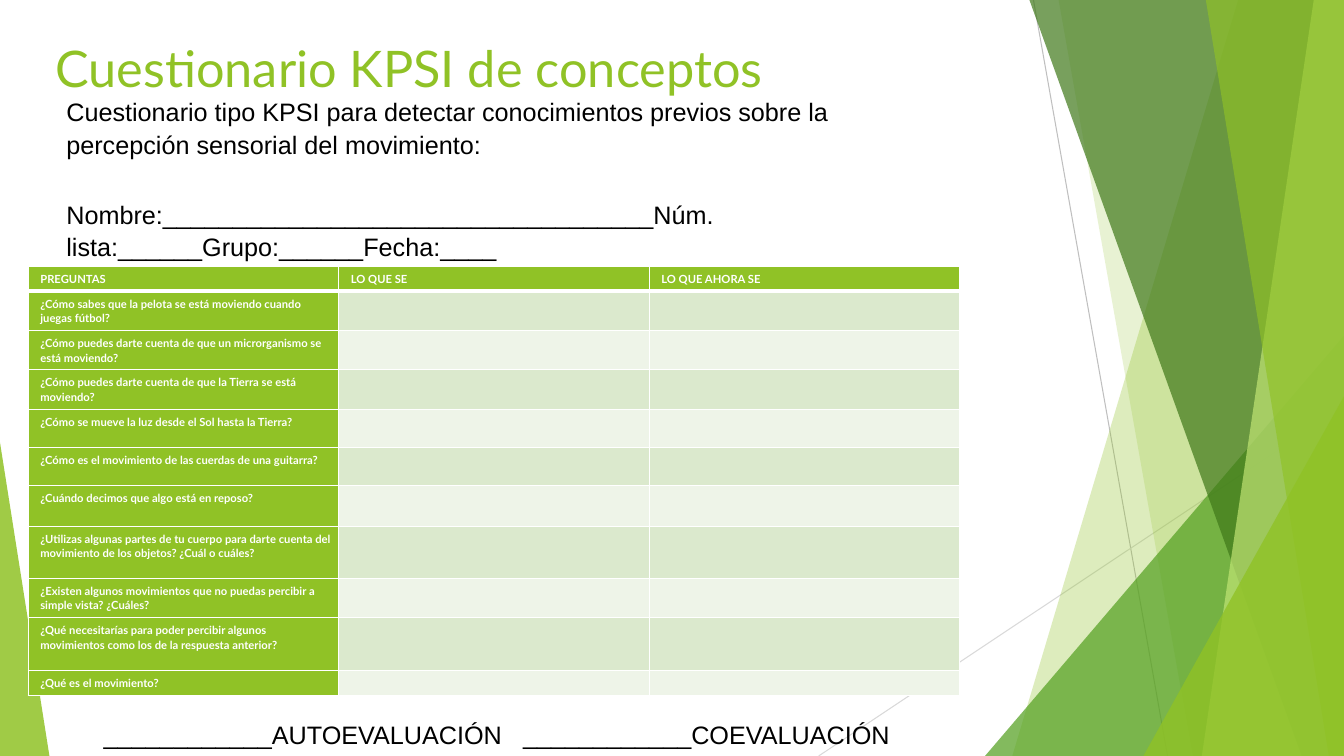
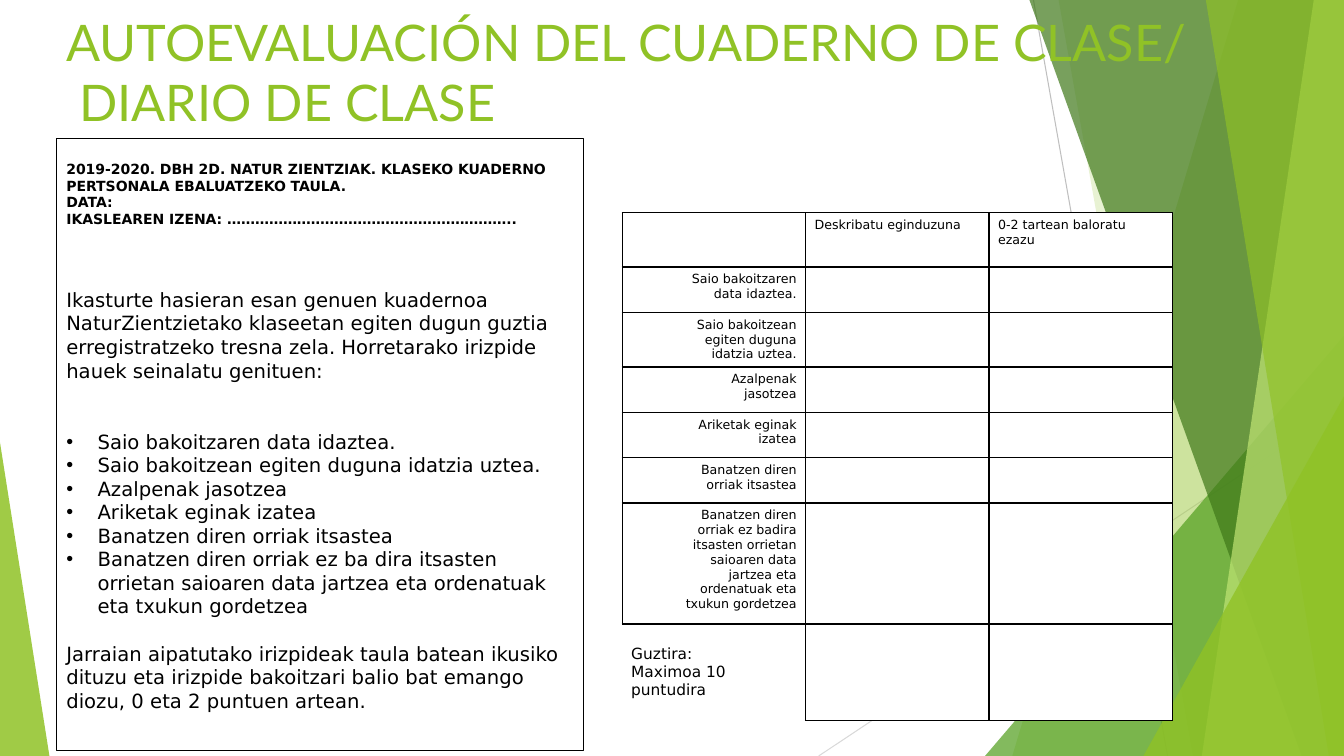
from dataclasses import dataclass
from typing import Any, Optional

from lxml.etree import SubElement
from pptx import Presentation
from pptx.dml.color import RGBColor
from pptx.enum.shapes import MSO_CONNECTOR as Connector, MSO_SHAPE as Preset
from pptx.enum.text import MSO_ANCHOR as Anchor, MSO_AUTO_SIZE as AutoSize, PP_ALIGN as Align
from pptx.oxml.ns import qn
from pptx.util import Inches, Pt

WIDTH, HEIGHT = 13.33, 7.5
COLOURS = {
    "green": "90C226", "leaf": "54A021", "forest": "3F7819", "lime": "C0E474",
    "band": "DBE9CD", "pale": "EEF4E8", "white": "FFFFFF", "black": "000000",
    "grey": "BFBFBF", "light grey": "D9D9D9",
}


@dataclass
class Style:
    font: str
    size: float
    colour: str = "black"
    bold: bool = False


@dataclass
class Paragraph:
    text: str
    style: Style
    format: Optional[dict[str, Any]] = None
    bullet: bool = False
    indent: float = 0


@dataclass
class Ray:
    start: tuple[float, float]
    end: tuple[float, float]
    colour: str


@dataclass
class Facet:
    """A translucent panel from the top edge to the bottom, against the right side."""
    top_left: float
    bottom_left: float
    colour: str
    opacity: int


@dataclass
class Wedge:
    """A translucent right triangle standing on the bottom edge."""
    left: float
    top: float
    width: float
    apex: int
    colour: str
    opacity: int


TITLE = Style("Lato", 36, "green")
ARIAL = Style("Arial", 18)
QUESTION = Style("Lato", 8, "white", True)
HEADING = Style("DejaVu Sans", 10, bold=True)
BODY = Style("DejaVu Sans", 14)
CRITERION = Style("DejaVu Sans", 9)
TOTAL = Style("DejaVu Sans", 11)

BACKDROP = [
    Ray((10.25, 0), (11.58, HEIGHT), "grey"),
    Ray((WIDTH, 4.03), (8.12, HEIGHT), "light grey"),
    Facet(12.28, 10.04, "green", 30),
    Facet(10.5, 11.83, "green", 20),
    Wedge(9.77, 3.33, 3.56, 1, "leaf", 72),
    Facet(10.21, 12.91, "forest", 70),
    Facet(13.03, 11.92, "lime", 70),
    Facet(11.96, 13.18, "green", 65),
    Wedge(11.34, 3.93, 1.99, 1, "green", 80),
    Wedge(0, 4.39, 0.49, 0, "green", 85),
]

QUESTIONS = [
    ("¿Cómo sabes que la pelota se está moviendo cuando juegas fútbol?", 0.39),
    ("¿Cómo puedes darte cuenta de que un microrganismo se está moviendo?", 0.39),
    ("¿Cómo puedes darte cuenta de que la Tierra se está moviendo?", 0.39),
    ("¿Cómo se mueve la luz desde el Sol hasta la Tierra?", 0.38),
    ("¿Cómo es el movimiento de las cuerdas de una guitarra?", 0.38),
    ("¿Cuándo decimos que algo está en reposo?", 0.4),
    ("¿Utilizas algunas partes de tu cuerpo para darte cuenta del movimiento de los objetos? "
     "¿Cuál o cuáles?", 0.52),
    ("¿Existen algunos movimientos que no puedas percibir a simple vista? ¿Cuáles?", 0.39),
    ("¿Qué necesitarías para poder percibir algunos movimientos como los de la respuesta "
     "anterior?", 0.52),
    ("¿Qué es el movimiento?", 0.25),
]

CRITERIA = [
    ("Saio bakoitzaren data idaztea.", 0.45),
    ("Saio bakoitzean egiten duguna idatzia uztea.", 0.54),
    ("Azalpenak jasotzea", 0.45),
    ("Ariketak eginak izatea", 0.45),
    ("Banatzen diren orriak itsastea", 0.45),
    ("Banatzen diren orriak ez badira itsasten orrietan saioaren data jartzea eta ordenatuak "
     "eta txukun gordetzea", 1.2),
]


def rgb(name: str) -> RGBColor:
    return RGBColor.from_string(COLOURS[name])


def lengths(*values: float) -> list[int]:
    return [Inches(value) for value in values]


def apply(target: Any, values: dict[str, Any]) -> None:
    for name, value in values.items():
        setattr(target, name, value)


def write(frame: Any, paragraphs: list[Paragraph]) -> None:
    frame.word_wrap = True
    for index, item in enumerate(paragraphs):
        para = frame.add_paragraph() if index else frame.paragraphs[0]
        apply(para, {"alignment": Align.LEFT, **(item.format or {})})
        properties = para._p.get_or_add_pPr()
        if item.indent:
            properties.set("marL", str(Inches(item.indent)))
        if item.bullet:
            properties.set("indent", str(-Inches(item.indent)))
            SubElement(properties, qn("a:buFont"), typeface="Arial")
            SubElement(properties, qn("a:buChar"), char="•")
        style = item.style
        if not item.text:
            SubElement(para._p, qn("a:endParaRPr"), sz=str(int(style.size * 100)))
            continue
        for number, line in enumerate(item.text.split("\n")):
            if number:
                para.add_line_break()
            span = para.add_run()
            span.text = line
            apply(span.font, {"name": style.font, "size": Pt(style.size), "bold": style.bold})
            span.font.color.rgb = rgb(style.colour)


def make_translucent(shape: Any, colour: str, opacity: int) -> None:
    shape.shadow.inherit = False
    shape.fill.solid()
    shape.fill.fore_color.rgb = rgb(colour)
    shape.line.fill.background()
    for colour_element in shape.element.iter(qn("a:srgbClr")):
        SubElement(colour_element, qn("a:alpha"), val=str(opacity * 1000))


def draw_ray(page: Any, ray: Ray) -> Any:
    line = page.shapes.add_connector(Connector.STRAIGHT, *lengths(*ray.start, *ray.end))
    line.line.color.rgb = rgb(ray.colour)
    line.line.width = Pt(0.75)
    SubElement(line.element.spPr, qn("a:effectLst"))
    return line


def draw_facet(page: Any, facet: Facet) -> Any:
    corners = [(WIDTH, 0), (WIDTH, HEIGHT), (facet.bottom_left, HEIGHT)]
    builder = page.shapes.build_freeform(*lengths(facet.top_left, 0))
    builder.add_line_segments([tuple(lengths(*corner)) for corner in corners])
    shape = builder.convert_to_shape()
    make_translucent(shape, facet.colour, facet.opacity)
    return shape


def draw_wedge(page: Any, wedge: Wedge) -> Any:
    box = lengths(wedge.left, wedge.top, wedge.width, HEIGHT - wedge.top)
    shape = page.shapes.add_shape(Preset.ISOSCELES_TRIANGLE, *box)
    shape.adjustments[0] = wedge.apex
    make_translucent(shape, wedge.colour, wedge.opacity)
    return shape


def move_backdrop_to_layout(page: Any) -> None:
    """Draw the backdrop and hand its shapes to the layout, so that all pages share them."""
    layout = page.slide_layout
    for holder in list(layout.placeholders)[1:]:
        holder.element.getparent().remove(holder.element)
    painters = {Ray: draw_ray, Facet: draw_facet, Wedge: draw_wedge}
    for item in BACKDROP:
        layout.shapes.element.append(painters[type(item)](page, item).element)


def set_title(page: Any, text: str, left: float, top: float, width: float) -> None:
    title = page.shapes.title
    left, top, width, height = lengths(left, top, width, 1.44)
    apply(title, {"left": left, "top": top, "width": width, "height": height})
    apply(title.text_frame, {"auto_size": AutoSize.NONE, "vertical_anchor": Anchor.TOP})
    write(title.text_frame, [Paragraph(text, TITLE)])


def add_text(page: Any, box: list[int], paragraphs: list[Paragraph]) -> Any:
    shape = page.shapes.add_textbox(*box)
    write(shape.text_frame, paragraphs)
    return shape


def add_grid(page: Any, left: float, top: float, column: float, heights: list[float]) -> Any:
    """Add a three-column table without the default banding."""
    box = lengths(left, top, 3 * column, sum(heights))
    table = page.shapes.add_table(len(heights), 3, *box).table
    apply(table, {"first_row": False, "horz_banding": False})
    for row, height in zip(table.rows, heights):
        row.height = Inches(height)
    return table


def fill_cell(cell: Any, paragraphs: list[Paragraph], fill: str, margin: float,
              borders: dict[str, float], border_colour: str) -> None:
    """Borders map a side (L, R, T, B) to its width in points; 0 hides it."""
    side, edge = lengths(margin, 0.05)
    apply(cell, {"margin_left": side, "margin_right": side,
                 "margin_top": edge, "margin_bottom": edge})
    write(cell.text_frame, paragraphs)
    properties = cell._tc.get_or_add_tcPr()
    for name, width in borders.items():
        line = SubElement(properties, qn(f"a:ln{name}"), w=str(Pt(width)))
        if width:
            paint = SubElement(line, qn("a:solidFill"))
            SubElement(paint, qn("a:srgbClr"), val=COLOURS[border_colour])
        else:
            SubElement(line, qn("a:noFill"))
    cell.fill.solid()
    cell.fill.fore_color.rgb = rgb(fill)


def build_questionnaire(page: Any) -> None:
    set_title(page, "Cuestionario KPSI de conceptos", 0.45, 0.32, 9.4)
    spacing = {"line_spacing": 1.07}
    add_text(page, lengths(0.56, 0.89, 8.96, 1.76), [
        Paragraph("Cuestionario tipo KPSI para detectar conocimientos previos sobre la "
                  "percepción sensorial del movimiento:", ARIAL, spacing),
        Paragraph("Nombre:___________________________________Núm. "
                  "lista:______Grupo:______Fecha:____", ARIAL,
                  {**spacing, "space_before": Pt(27)}),
    ])
    rows = [["PREGUNTAS", "LO QUE SE", "LO QUE AHORA SE"]]
    rows += [[question, "", ""] for question, _ in QUESTIONS]
    table = add_grid(page, 0.28, 2.64, 3.08, [0.25] + [height for _, height in QUESTIONS])
    for row, texts in enumerate(rows):
        for column, text in enumerate(texts):
            fill = "green" if row == 0 or column == 0 else ("pale", "band")[row % 2]
            borders = {"L": 1, "R": 1, "T": 3 if row == 1 else 1, "B": 1 if row else 3}
            fill_cell(table.cell(row, column), [Paragraph(text, QUESTION, spacing, indent=0.07)],
                      fill, 0.05, borders, "white")
    footer = add_text(page, lengths(0.93, 7.07, 8.92, 0.43), [
        Paragraph("____________AUTOEVALUACIÓN\t____________COEVALUACIÓN", ARIAL, spacing)])
    properties = footer.text_frame.paragraphs[0]._p.get_or_add_pPr()
    stops = SubElement(properties, qn("a:tabLst"))
    SubElement(stops, qn("a:tab"), pos=str(Inches(4.16)), algn="l")


def build_self_assessment(page: Any) -> None:
    set_title(page, "AUTOEVALUACIÓN DEL CUADERNO DE CLASE/\n DIARIO DE CLASE", 0.56, 0.06, 12.47)
    rows = [["", "Deskribatu eginduzuna", "0-2 tartean baloratu ezazu"]]
    rows += [[criterion, "", ""] for criterion, _ in CRITERIA] + [["", "", ""]]
    heights = [0.54] + [height for _, height in CRITERIA] + [0.96]
    table = add_grid(page, 6.17, 2.11, 1.82, heights)
    last = len(rows) - 1
    for row, texts in enumerate(rows):
        for column, text in enumerate(texts):
            paragraphs = [Paragraph(text, CRITERION)]
            borders = dict.fromkeys("LRTB", 1)
            if column == 0 and row == last:
                paragraphs = [Paragraph(line, TOTAL) for line in ("Guztira:", "Maximoa 10 puntudira")]
                borders.update(L=0, B=0)
                table.cell(row, column).vertical_anchor = Anchor.MIDDLE
            elif column == 0:
                paragraphs = [Paragraph(text, CRITERION, {"alignment": Align.RIGHT}, indent=0.5)]
            fill_cell(table.cell(row, column), paragraphs, "white", 0.09, borders, "black")

    panel = page.shapes.add_shape(Preset.RECTANGLE, *lengths(0.56, 1.37, 5.23, 6.08))
    panel.shadow.inherit = False
    panel.fill.background()
    panel.line.color.rgb = rgb("black")
    panel.line.width = Pt(0.75)
    apply(panel.text_frame, {"vertical_anchor": Anchor.TOP, "margin_top": Inches(0.22)})
    bullets = [criterion for criterion, _ in CRITERIA[:-1]]
    bullets.append("Banatzen diren orriak ez ba dira itsasten orrietan saioaren data jartzea "
                   "eta ordenatuak eta txukun gordetzea")
    write(panel.text_frame, [
        Paragraph("2019-2020. DBH 2D. NATUR ZIENTZIAK. KLASEKO KUADERNO PERTSONALA "
                  "EBALUATZEKO TAULA.", HEADING),
        Paragraph("DATA:", HEADING),
        Paragraph("IKASLEAREN IZENA: ……………………………………………………..", HEADING),
        Paragraph("Ikasturte hasieran esan genuen kuadernoa NaturZientzietako klaseetan egiten "
                  "dugun guztia erregistratzeko tresna zela. Horretarako irizpide hauek "
                  "seinalatu genituen:", BODY, {"space_before": Pt(43), "space_after": Pt(34)}),
        *[Paragraph(bullet, BODY, bullet=True, indent=0.31) for bullet in bullets],
        Paragraph("Jarraian aipatutako irizpideak taula batean ikusiko dituzu eta irizpide "
                  "bakoitzari balio bat emango diozu, 0 eta 2 puntuen artean.", BODY,
                  {"space_before": Pt(17)}),
    ])


def main() -> None:
    deck = Presentation()
    deck.slide_width, deck.slide_height = lengths(WIDTH, HEIGHT)
    title_only = deck.slide_layouts[5]
    pages = [deck.slides.add_slide(title_only) for _ in range(2)]
    move_backdrop_to_layout(pages[0])
    build_questionnaire(pages[0])
    build_self_assessment(pages[1])
    deck.save("out.pptx")


if __name__ == "__main__":
    main()
